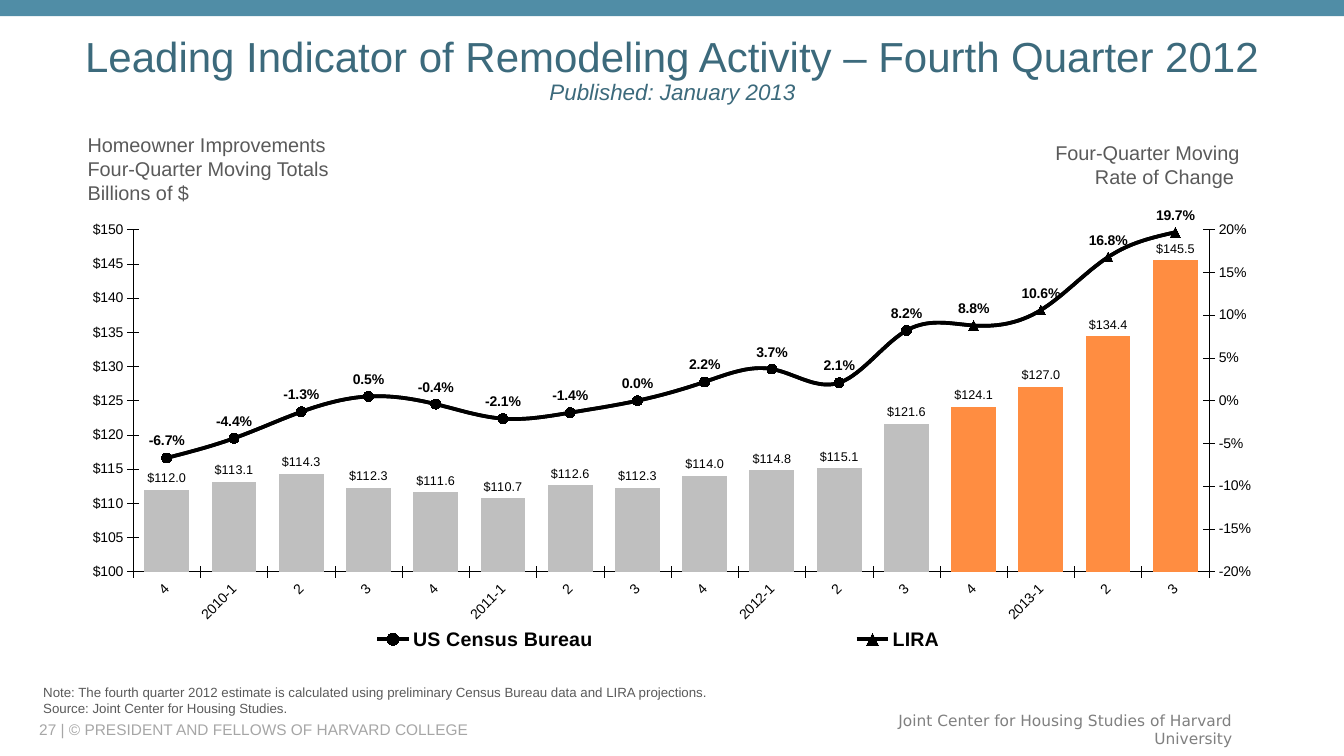
from copy import deepcopy

from pptx import Presentation
from pptx.chart.axis import ValueAxis
from pptx.chart.data import CategoryChartData
from pptx.dml.color import RGBColor
from pptx.enum.chart import (XL_CHART_TYPE, XL_LABEL_POSITION,
                             XL_LEGEND_POSITION, XL_MARKER_STYLE, XL_TICK_MARK)
from pptx.enum.shapes import MSO_SHAPE
from pptx.enum.text import MSO_ANCHOR, MSO_AUTO_SIZE, PP_ALIGN
from pptx.oxml import parse_xml
from pptx.oxml.ns import nsdecls, qn
from pptx.util import Inches, Pt

COLUMNS = XL_CHART_TYPE.COLUMN_CLUSTERED
ABOVE, OUTSIDE = XL_LABEL_POSITION.ABOVE, XL_LABEL_POSITION.OUTSIDE_END
CIRCLE, TRIANGLE = XL_MARKER_STYLE.CIRCLE, XL_MARKER_STYLE.TRIANGLE
CROSS, NO_TICK = XL_TICK_MARK.CROSS, XL_TICK_MARK.NONE
BOTTOM = XL_LEGEND_POSITION.BOTTOM
TOP, MIDDLE = MSO_ANCHOR.TOP, MSO_ANCHOR.MIDDLE
LEFT, CENTER, RIGHT = PP_ALIGN.LEFT, PP_ALIGN.CENTER, PP_ALIGN.RIGHT

BLACK = RGBColor(0x00, 0x00, 0x00)
TEAL = RGBColor(0x50, 0x8D, 0xA6)
DARK_TEAL = RGBColor(0x3C, 0x6A, 0x7C)
TEXT_GREY = RGBColor(0x5A, 0x5A, 0x5A)
FOOTER_GREY = RGBColor(0x80, 0x80, 0x80)
PALE_GREY = RGBColor(0xA6, 0xA6, 0xA6)
BAR_GREY = RGBColor(0xBF, 0xBF, 0xBF)
ORANGE = RGBColor(0xFF, 0x8D, 0x41)

WIDTH, HEIGHT = Inches(13.33), Inches(7.5)
QUARTERS = ["4", "2010-1", "2", "3", "4", "2011-1", "2", "3",
            "4", "2012-1", "2", "3", "4", "2013-1", "2", "3"]
TOTALS = [112, 113.1, 114.3, 112.3, 111.6, 110.7, 112.6, 112.3,
          114, 114.8, 115.1, 121.6, 124.1, 127, 134.4, 145.5]
RATES = [-0.067, -0.044, -0.013, 0.005, -0.004, -0.021, -0.014, 0,
         0.022, 0.037, 0.021, 0.082, 0.088, 0.106, 0.168, 0.197]
FIRST_PROJECTED = 12


def area(left, top, width, height):
    """Turn percentages of the slide into a position and size."""
    return (int(WIDTH * left / 100), int(HEIGHT * top / 100),
            int(WIDTH * width / 100), int(HEIGHT * height / 100))


def set_font(font, size, color, name="Arial", bold=False):
    font.size, font.name, font.bold = Pt(size), name, bold
    font.color.rgb = color


def add_text(slide, place, lines, size, color, name="Arial",
             align=LEFT, anchor=TOP):
    frame = slide.shapes.add_textbox(*area(*place)).text_frame
    frame.word_wrap = True
    frame.vertical_anchor = anchor
    frame.text = "\n".join(lines)
    for paragraph in frame.paragraphs:
        paragraph.alignment = align
        set_font(paragraph.font, size, color, name)


def add_top_band(slide):
    band = slide.shapes.add_shape(MSO_SHAPE.RECTANGLE, *area(0, 0, 100, 2.13))
    band.shadow.inherit = False
    band.fill.solid()
    band.fill.fore_color.rgb = TEAL
    band.line.fill.background()


def fill_title(slide, heading, subtitle):
    title = slide.shapes.title
    title.left, title.top, title.width, title.height = area(4.2, 4.4, 91.67, 10)
    frame = title.text_frame
    frame.auto_size = MSO_AUTO_SIZE.NONE
    frame.vertical_anchor = MIDDLE
    paragraph = frame.paragraphs[0]
    paragraph.alignment, paragraph.line_spacing = CENTER, 0.9
    heading_run = paragraph.add_run()
    heading_run.text = heading
    set_font(heading_run.font, 30, DARK_TEAL)
    paragraph.add_line_break()
    subtitle_run = paragraph.add_run()
    subtitle_run.text = subtitle
    set_font(subtitle_run.font, 16, DARK_TEAL)
    subtitle_run.font.italic = True


def manual_layout(x, y, w, h, inner=False):
    target = '<c:layoutTarget val="inner"/>' if inner else ""
    return parse_xml(
        f'<c:layout {nsdecls("c")}><c:manualLayout>{target}'
        '<c:xMode val="edge"/><c:yMode val="edge"/>'
        f'<c:x val="{x}"/><c:y val="{y}"/><c:w val="{w}"/><c:h val="{h}"/>'
        '</c:manualLayout></c:layout>')


def replace_layout(parent, index, layout):
    for old in parent.findall(qn("c:layout")):
        parent.remove(old)
    parent.insert(index, layout)


def style_axis(axis):
    axis.has_major_gridlines = False
    axis.major_tick_mark, axis.minor_tick_mark = CROSS, NO_TICK
    set_font(axis.tick_labels.font, 10, BLACK)
    axis.format.line.color.rgb = BLACK
    axis.format.line.width = Pt(0.33)


def scale_axis(axis, low, high, step, number_format):
    axis.minimum_scale, axis.maximum_scale, axis.major_unit = low, high, step
    axis.tick_labels.number_format = number_format
    axis.tick_labels.number_format_is_linked = False


def move_rates_to_right_axis(plot_area):
    """Turn all series but the first into lines on a second pair of axes."""
    bars = plot_area.find(qn("c:barChart"))
    lines = parse_xml(
        f'<c:lineChart {nsdecls("c")}><c:grouping val="standard"/>'
        '<c:varyColors val="0"/><c:marker val="1"/>'
        '<c:axId val="5001"/><c:axId val="5002"/></c:lineChart>')
    for position, series in enumerate(bars.findall(qn("c:ser"))[1:], start=2):
        for bar_setting in series.findall(qn("c:invertIfNegative")):
            series.remove(bar_setting)
        lines.insert(position, series)
    bars.addnext(lines)

    quarter_axis = deepcopy(plot_area.find(qn("c:catAx")))
    rate_axis = deepcopy(plot_area.find(qn("c:valAx")))
    for axis, own, other in ((quarter_axis, "5001", "5002"),
                             (rate_axis, "5002", "5001")):
        axis.find(qn("c:axId")).set("val", own)
        axis.find(qn("c:crossAx")).set("val", other)
    quarter_axis.find(qn("c:delete")).set("val", "1")
    rate_axis.find(qn("c:axPos")).set("val", "r")
    rate_axis.find(qn("c:crosses")).set("val", "max")
    plot_area.find(qn("c:valAx")).addnext(rate_axis)
    rate_axis.addnext(quarter_axis)
    scale_axis(ValueAxis(rate_axis), -0.2, 0.2, 0.05, "0%")


def label_values(series, position, number_format, size, bold=False):
    labels = series.data_labels
    labels.show_value = True
    labels.position = position
    labels.number_format, labels.number_format_is_linked = number_format, False
    set_font(labels.font, size, BLACK, bold=bold)


def style_marker(marker, style):
    marker.style, marker.size = style, 7
    marker.format.fill.solid()
    marker.format.fill.fore_color.rgb = BLACK
    marker.format.line.color.rgb = BLACK


def style_rate_line(series, style, other_style, other_points):
    series.smooth = True
    series.format.line.color.rgb = BLACK
    series.format.line.width = Pt(2.64)
    style_marker(series.marker, style)
    for index in other_points:
        point = series.points[index]
        style_marker(point.marker, other_style)
        point.format.line.color.rgb = BLACK
        point.format.line.width = Pt(2.64)


def style_legend(chart):
    chart.has_legend = True
    legend = chart.legend
    legend.position, legend.include_in_layout = BOTTOM, False
    set_font(legend.font, 14, BLACK, bold=True)
    replace_layout(legend._element, 1, manual_layout(0.05, 0.93, 0.88, 0.07))
    legend._element.insert(1, parse_xml(
        f'<c:legendEntry {nsdecls("c")}><c:idx val="0"/>'
        '<c:delete val="1"/></c:legendEntry>'))


def add_indicator_chart(slide):
    data = CategoryChartData()
    data.categories = QUARTERS
    data.add_series("Series 1", TOTALS)
    data.add_series("US Census Bureau", RATES)
    data.add_series("LIRA", RATES)
    chart = slide.shapes.add_chart(
        COLUMNS, *area(4.35, 26.67, 91.07, 60), data).chart
    chart.has_title = False
    set_font(chart.font, 13.2, BLACK)

    # Axes
    style_axis(chart.category_axis)
    chart.category_axis._element.find(
        qn("c:txPr")).find(qn("a:bodyPr")).set("rot", "-2700000")
    style_axis(chart.value_axis)
    scale_axis(chart.value_axis, 100, 150, 5, "\\$#,##0")
    plot_area = chart._chartSpace.chart.plotArea
    move_rates_to_right_axis(plot_area)
    replace_layout(plot_area, 0,
                   manual_layout(0.061, 0.062, 0.879, 0.754, inner=True))

    # Columns, with the projected quarters in orange
    bars, lines = chart.plots
    bars.gap_width, bars.vary_by_categories = 50, False
    totals = bars.series[0]
    totals.format.fill.solid()
    totals.format.fill.fore_color.rgb = BAR_GREY
    projected = range(FIRST_PROJECTED, len(QUARTERS))
    for index in projected:
        fill = totals.points[index].format.fill
        fill.solid()
        fill.fore_color.rgb = ORANGE
    label_values(totals, OUTSIDE, "\\$#,##0.0", 9)

    # Rate lines
    census, lira = lines.series
    style_rate_line(census, CIRCLE, TRIANGLE, projected)
    style_rate_line(lira, TRIANGLE, CIRCLE, range(FIRST_PROJECTED))
    label_values(lira, ABOVE, "0.0%", 10, bold=True)
    style_legend(chart)


def main():
    deck = Presentation()
    deck.slide_width, deck.slide_height = WIDTH, HEIGHT
    slide = deck.slides.add_slide(deck.slide_layouts[5])

    # Frame of the slide
    add_text(slide, (2.18, 95.07, 59.41, 2.67),
             ["27 | © PRESIDENT AND FELLOWS OF HARVARD COLLEGE"],
             11, PALE_GREY, anchor=MIDDLE)
    add_text(slide, (63.17, 94.53, 29.26, 3.87),
             ["Joint Center for Housing Studies of Harvard University"],
             11, FOOTER_GREY, "DejaVu Sans", RIGHT, MIDDLE)
    add_top_band(slide)
    fill_title(slide,
               "Leading Indicator of Remodeling Activity – Fourth Quarter 2012",
               "Published: January 2013")

    # Axis captions, chart and notes
    add_text(slide, (5.78, 16.93, 28.73, 10.93),
             ["Homeowner Improvements", "Four-Quarter Moving Totals",
              "Billions of $"], 14.2, TEXT_GREY)
    add_text(slide, (62.49, 18, 30.46, 7.73),
             ["Four-Quarter Moving", "Rate of Change "],
             14.2, TEXT_GREY, align=RIGHT)
    add_indicator_chart(slide)
    add_text(slide, (2.48, 89.87, 75.54, 5.6),
             ["Note: The fourth quarter 2012 estimate is calculated using "
              "preliminary Census Bureau data and LIRA projections.",
              "Source: Joint Center for Housing Studies."], 9.5, TEXT_GREY)
    deck.save("out.pptx")


if __name__ == "__main__":
    main()
